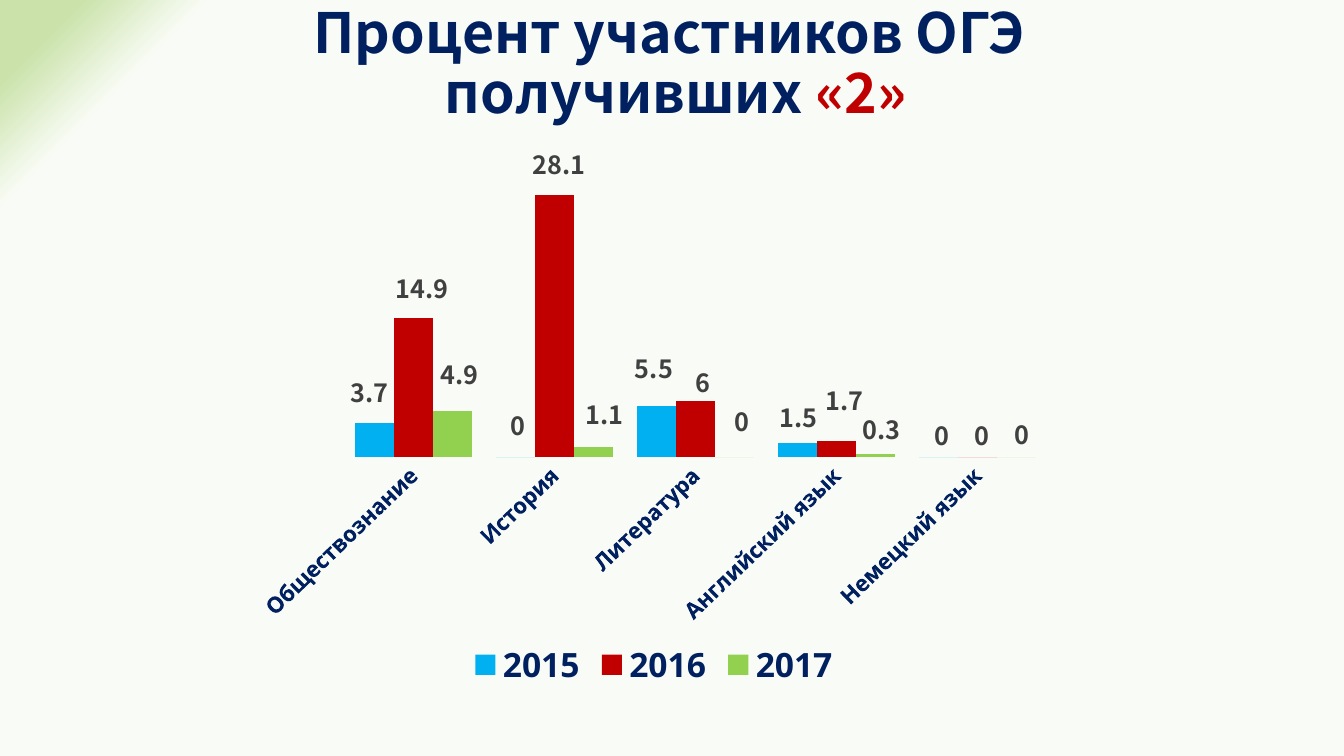
from lxml import etree
from pptx import Presentation
from pptx.chart.data import CategoryChartData
from pptx.dml.color import RGBColor
from pptx.enum.chart import XL_CHART_TYPE, XL_LABEL_POSITION, XL_LEGEND_POSITION, XL_TICK_MARK
from pptx.enum.text import MSO_ANCHOR, PP_ALIGN
from pptx.oxml import parse_xml
from pptx.oxml.ns import qn
from pptx.util import Pt

COLUMNS = XL_CHART_TYPE.COLUMN_CLUSTERED
OUTSIDE = XL_LABEL_POSITION.OUTSIDE_END
BOTTOM = XL_LEGEND_POSITION.BOTTOM
NO_TICK = XL_TICK_MARK.NONE
MIDDLE, CENTER = MSO_ANCHOR.MIDDLE, PP_ALIGN.CENTER

# Content
TITLE_LINES = [
    [("Процент участников ОГЭ ", "title")],
    [("получивших ", "title"), ("«2»", "mark")],
]
SUBJECTS = ["Обществознание", "История", "Литература", "Английский язык", "Немецкий язык"]
# year: (values, label centres in px)
RESULTS = {
    "2015": ([3.7, 0, 5.5, 1.5, 0],
             [(370, 392), (518, 426), (654, 368), (799, 418), (942, 436)]),
    "2016": ([14.9, 28.1, 6, 1.7, 0],
             [(422, 288), (559, 163), (703, 382), (845, 400), (982, 436)]),
    "2017": ([4.9, 1.1, 0, 0.3, 0],
             [(460, 374), (605, 415), (742, 422), (882, 430), (1022, 435)]),
}

# Theme: colours and type
THEME = {
    "bars": {"2015": "00B0F0", "2016": "C00000", "2017": "92D050"},
    "background": [(90, "F9FCF6"), (96, "CBE3AB"), (100, "CBE3AB"), (100, "DCECC7")],
    "title": {"name": "Noto Sans CJK KR", "size": 39.6, "bold": True, "color": "002060"},
    "mark": {"name": "Noto Sans CJK KR", "size": 39.6, "bold": True, "color": "C00000"},
    "chart": {"name": "Calibri", "size": 10, "color": "000000"},
    "axis": {"name": "Open Sans", "size": 16, "bold": True, "color": "002060"},
    "legend": {"name": "Open Sans", "size": 24, "bold": True, "color": "002060"},
    "label": {"name": "Noto Sans CJK SC", "size": 18, "bold": True, "color": "404040"},
}

# Layout in px
PX = 914400 / 100.8
SLIDE = (1344, 756)
TITLE_BOX = (96, 16, 1159, 99)
CHART_BOX = (244, 145, 820, 549)
PLOT_BOX = (343, 175, 705, 281)
AXIS_MAX = 30
AXIS_ANGLE = -44
GAP = 63
LABEL_RISE = 20


def px(*lengths):
    return [round(n * PX) for n in lengths]


def style(font, key):
    for name, value in THEME[key].items():
        if name == "color":
            font.color.rgb = RGBColor.from_string(value)
        else:
            setattr(font, name, Pt(value) if name == "size" else value)


def layout(x, y, w=None, h=None):
    """Manual chart layout: a plot frame with a size, a label shift without."""
    values = {"x": x, "y": y}
    if w is not None:
        values = {"layoutTarget": "inner", "xMode": "edge", "yMode": "edge",
                  **values, "w": w, "h": h}
    node = etree.Element(qn("c:layout"))
    manual = etree.SubElement(node, qn("c:manualLayout"))
    for name, value in values.items():
        text = value if isinstance(value, str) else f"{value:.4f}"
        etree.SubElement(manual, qn("c:" + name)).set("val", text)
    return node


def hide_leader_lines(labels):
    for old in labels.findall(qn("c:showLeaderLines")):
        old.set("val", "0")
    labels.append(parse_xml(
        '<c:extLst xmlns:c="http://schemas.openxmlformats.org/drawingml/2006/chart">'
        '<c:ext uri="{CE6537A1-D6FC-4f65-9D91-7224C49458BB}" '
        'xmlns:c15="http://schemas.microsoft.com/office/drawing/2012/chart">'
        '<c15:showLeaderLines val="0"/></c:ext></c:extLst>'))


def paint_background(s):
    s.background.fill.gradient()
    grad = s.background._cSld.find(".//" + qn("a:gradFill"))
    stops = "".join(f'<a:gs pos="{pos * 1000}"><a:srgbClr val="{color}"/></a:gs>'
                    for pos, color in THEME["background"])
    grad.getparent().replace(grad, parse_xml(
        '<a:gradFill xmlns:a="http://schemas.openxmlformats.org/drawingml/2006/main" '
        f'rotWithShape="1"><a:gsLst>{stops}</a:gsLst><a:path path="circle">'
        '<a:fillToRect l="100000" t="100000"/></a:path></a:gradFill>'))


def add_title(s):
    tf = s.shapes.add_textbox(*px(*TITLE_BOX)).text_frame
    tf.word_wrap = True
    tf.vertical_anchor = MIDDLE
    p = tf.paragraphs[0]
    p.alignment, p.line_spacing = CENTER, 0.9
    for i, line in enumerate(TITLE_LINES):
        if i:
            p.add_line_break()
        for text, key in line:
            r = p.add_run()
            r.text = text
            style(r.font, key)


def add_results_chart(s):
    data = CategoryChartData()
    data.categories = SUBJECTS
    for year, (values, _) in RESULTS.items():
        data.add_series(year, values)
    chart = s.shapes.add_chart(COLUMNS, *px(*CHART_BOX), data).chart
    style(chart.font, "chart")
    chart.has_title = False

    # Legend and axes
    chart.has_legend = True
    chart.legend.position = BOTTOM
    chart.legend.include_in_layout = False
    style(chart.legend.font, "legend")
    axis = chart.category_axis
    axis.major_tick_mark = axis.minor_tick_mark = NO_TICK
    axis.format.line.fill.background()
    style(axis.tick_labels.font, "axis")
    axis._element.find(".//" + qn("a:bodyPr")).set("rot", str(AXIS_ANGLE * 60000))
    scale = chart.value_axis
    scale.minimum_scale, scale.maximum_scale = 0, AXIS_MAX
    scale.has_major_gridlines = False
    scale.visible = False

    # Plot frame
    left, top, width, height = PLOT_BOX
    cx, cy, cw, ch = CHART_BOX
    area = chart._chartSpace.find(".//" + qn("c:plotArea"))
    for old in area.findall(qn("c:layout")):
        area.remove(old)
    area.insert(0, layout((left - cx) / cw, (top - cy) / ch, width / cw, height / ch))

    # Bars and shifted value labels
    plot = chart.plots[0]
    plot.gap_width, plot.overlap, plot.vary_by_categories = GAP, 0, False
    pitch = width / len(SUBJECTS)
    bar = pitch / (len(RESULTS) + GAP / 100)
    for j, (ser, (values, centres)) in enumerate(zip(plot.series, RESULTS.values())):
        ser.format.fill.solid()
        ser.format.fill.fore_color.rgb = RGBColor.from_string(THEME["bars"][ser.name])
        for i, (value, (x, y)) in enumerate(zip(values, centres)):
            label = ser.points[i].data_label
            style(label.font, "label")
            label.position = OUTSIDE
            bar_x = left + pitch * (i + 0.5) + bar * (j - (len(RESULTS) - 1) / 2)
            bar_y = top + height * (1 - value / AXIS_MAX) - LABEL_RISE
            label._get_or_add_dLbl().insert(1, layout((x - bar_x) / cw, (y - bar_y) / ch))
        hide_leader_lines(ser._element.find(qn("c:dLbls")))


def main():
    prs = Presentation()
    prs.slide_width, prs.slide_height = px(*SLIDE)
    s = prs.slides.add_slide(prs.slide_layouts[6])
    paint_background(s)
    add_title(s)
    add_results_chart(s)
    prs.save("out.pptx")


if __name__ == "__main__":
    main()
